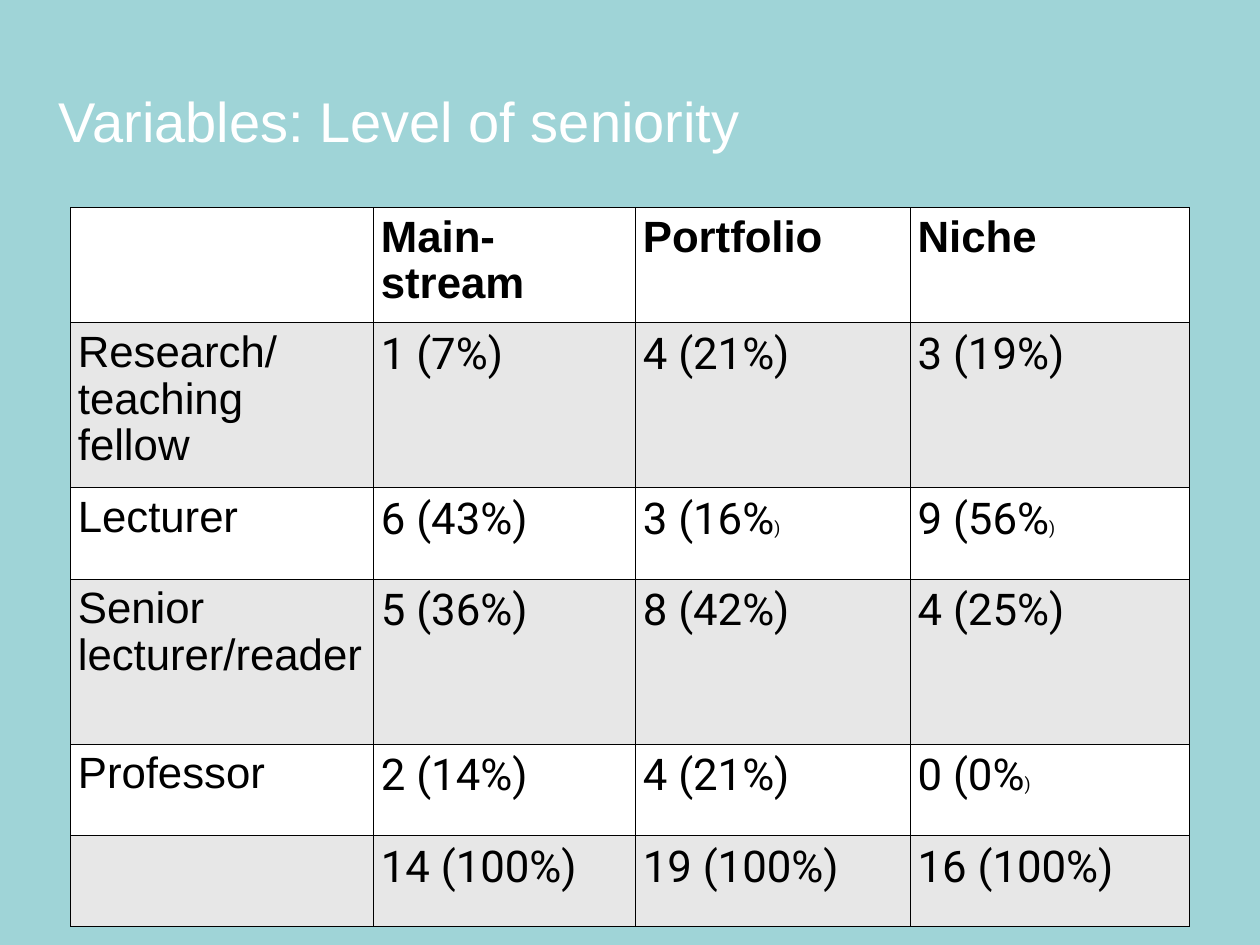
from lxml import etree
from pptx import Presentation
from pptx.dml.color import RGBColor
from pptx.oxml.ns import qn
from pptx.util import Cm, Pt

COLUMN_WIDTHS = [6.11, 5.28, 5.54, 5.62]
ROW_HEIGHTS = [2.32, 3.33, 1.84, 3.33, 1.84, 1.84]
SENIORITY_ROWS = [
    ["", "Main-\vstream", "Portfolio", "Niche"],
    ["Research/teaching fellow", "1 (7%)", "4 (21%)", "3 (19%)"],
    ["Lecturer", "6 (43%)", ("3 (16%", ")"), ("9 (56%", ")")],
    ["Senior lecturer/reader", "5 (36%)", "8 (42%)", "4 (25%)"],
    ["Professor", "2 (14%)", "4 (21%)", ("0 (0%", ")")],
    ["", "14 (100%)", "19 (100%)", "16 (100%)"],
]


def color(hex_text):
    return RGBColor.from_string(hex_text)


def add_text(para, text, *, size, font="Arial", fill="000000", bold=False):
    """Append text to a paragraph; a vertical tab becomes a line break."""
    for index, line in enumerate(text.split("\v")):
        if index:
            para.add_line_break()
        span = para.add_run()
        span.text = line
        span.font.name = font
        span.font.size = Pt(size)
        span.font.bold = bold
        span.font.color.rgb = color(fill)


def add_borders(cell, hex_text, points):
    properties = cell._tc.get_or_add_tcPr()
    for side in ("lnL", "lnR", "lnT", "lnB"):
        line = etree.SubElement(properties, qn(f"a:{side}"), w=str(Pt(points)))
        fill = etree.SubElement(line, qn("a:solidFill"))
        etree.SubElement(fill, qn("a:srgbClr"), val=hex_text)


class SlideBuilder:
    """Holds the slide's style and adds its elements."""

    background = "9FD4D7"
    title_color = "FFFFFF"
    band_colors = ("FFFFFF", "E7E7E7")
    border_color = "000000"
    title_size = 32
    body_size = 25
    small_size = 10

    def __init__(self, page):
        self.page = page
        page.background.fill.solid()
        page.background.fill.fore_color.rgb = color(self.background)

    def title(self, text, left, top, width, height):
        box = self.page.shapes.add_textbox(Cm(left), Cm(top), Cm(width), Cm(height))
        frame = box.text_frame
        frame.word_wrap = True
        frame.margin_left = frame.margin_right = Cm(0.13)
        frame.margin_top = frame.margin_bottom = Cm(0.13)
        add_text(frame.paragraphs[0], text, size=self.title_size, fill=self.title_color)

    def table(self, rows, left, top, widths, heights):
        table = self.page.shapes.add_table(
            len(rows), len(widths), Cm(left), Cm(top), Cm(sum(widths)), Cm(sum(heights))
        ).table
        for column, width in zip(table.columns, widths):
            column.width = Cm(width)
        for row, height in zip(table.rows, heights):
            row.height = Cm(height)
        for row_index, row in enumerate(rows):
            for column_index, content in enumerate(row):
                self.cell(table.cell(row_index, column_index), content, row_index, column_index)

    def cell(self, cell, content, row_index, column_index):
        """Style one cell; a pair holds normal text and a small ending."""
        cell.margin_left = cell.margin_right = Cm(0.15)
        cell.margin_top = cell.margin_bottom = Cm(0.15)
        add_borders(cell, self.border_color, 0.25)
        cell.fill.solid()
        cell.fill.fore_color.rgb = color(self.band_colors[row_index % 2])
        if not content:
            return
        is_header = row_index == 0
        font = "Arial" if is_header or column_index == 0 else "Roboto"
        para = cell.text_frame.paragraphs[0]
        para.line_spacing = 0.96
        parts = (content,) if isinstance(content, str) else content
        for text, size in zip(parts, (self.body_size, self.small_size)):
            add_text(para, text, size=size, font=font, bold=is_header)


def main():
    deck = Presentation()
    deck.slide_width, deck.slide_height = Cm(25.4), Cm(19.05)
    builder = SlideBuilder(deck.slides.add_slide(deck.slide_layouts[6]))
    builder.table(SENIORITY_ROWS, 1.42, 4.18, COLUMN_WIDTHS, ROW_HEIGHTS)
    builder.title("Variables: Level of seniority", 1.06, 1.61, 14.4, 1.52)
    deck.save("out.pptx")


if __name__ == "__main__":
    main()
